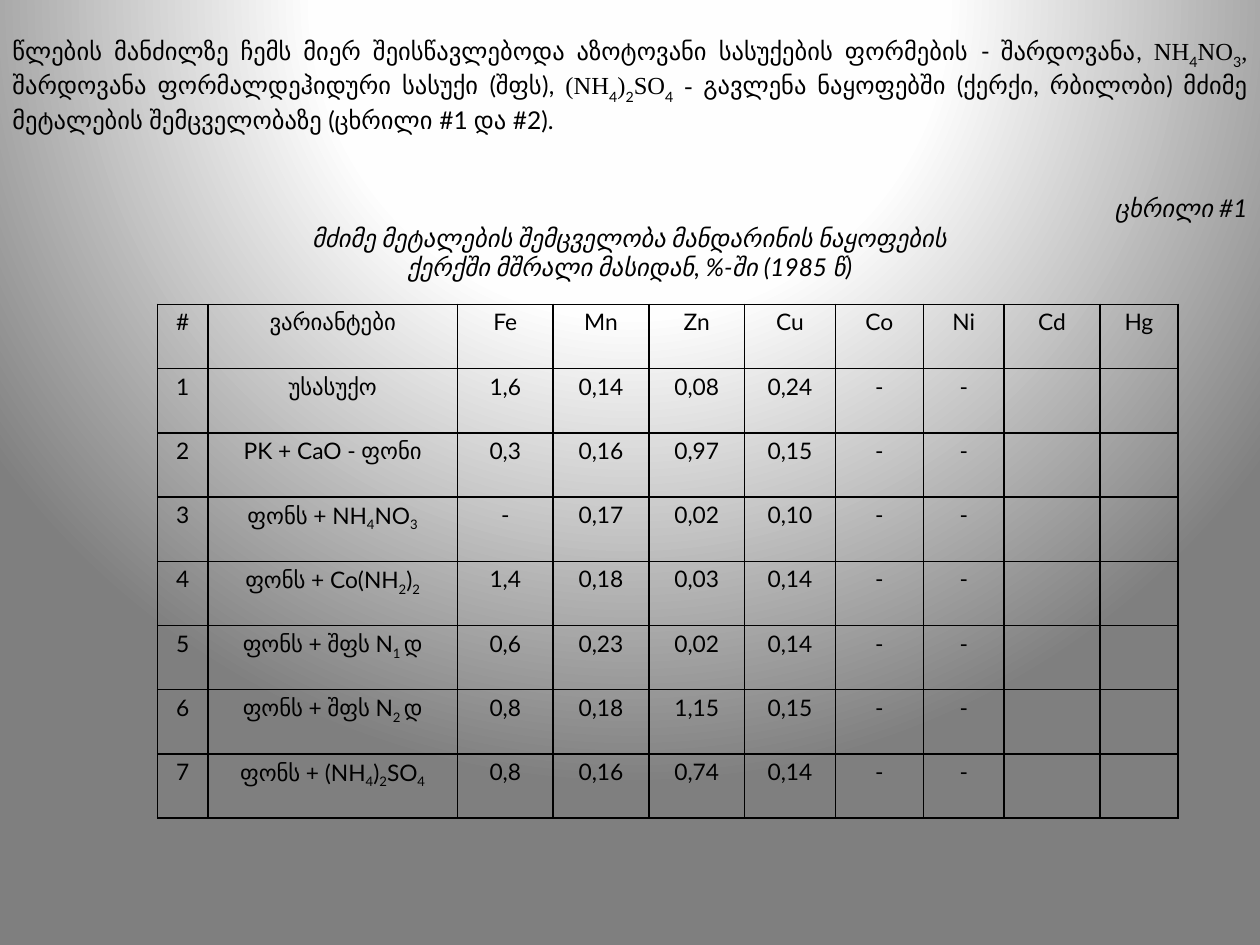
"""Build a slide with an introduction and a table of heavy metals in mandarin peel."""
from dataclasses import dataclass

from pptx import Presentation
from pptx.dml.color import RGBColor as Color
from pptx.enum.text import MSO_ANCHOR as Anchor, PP_ALIGN as Align
from pptx.oxml import parse_xml
from pptx.oxml.ns import nsdecls
from pptx.util import Inches, Pt

INTRO = [
    ("წლების მანძილზე ჩემს მიერ შეისწავლებოდა აზოტოვანი სასუქების ფორმების - შარდოვანა, ", "sans"),
    ("NH~4~NO~3~,", "serif"),
    (" შარდოვანა ფორმალდეჰიდური სასუქი (შფს), ", "sans"),
    ("(NH~4~)~2~SO~4~ - ", "serif"),
    ("გავლენა ნაყოფებში (ქერქი, რბილობი) მძიმე მეტალების შემცველობაზე (ცხრილი #1 და #2).", "sans"),
]
CAPTIONS = [
    ("ცხრილი #1", Align.RIGHT, 2),
    ("მძიმე მეტალების შემცველობა მანდარინის ნაყოფების", Align.CENTER, 0),
    ("ქერქში მშრალი მასიდან, %-ში (1985 წ)", Align.CENTER, 0),
]
HEADER = ["#", "ვარიანტები", "Fe", "Mn", "Zn", "Cu", "Co", "Ni", "Cd", "Hg"]
VARIANTS = [
    ("უსასუქო", "1,6", "0,14", "0,08", "0,24"),
    ("PK + CaO - ფონი", "0,3", "0,16", "0,97", "0,15"),
    ("ფონს + NH~4~NO~3", "-", "0,17", "0,02", "0,10"),
    ("ფონს + Co(NH~2~)~2", "1,4", "0,18", "0,03", "0,14"),
    ("ფონს + შფს N~1 ~დ", "0,6", "0,23", "0,02", "0,14"),
    ("ფონს + შფს N~2 ~დ", "0,8", "0,18", "1,15", "0,15"),
    ("ფონს + (NH~4~)~2~SO~4", "0,8", "0,16", "0,74", "0,14"),
]
COLUMN_SHARES = [0.04, 0.198, 0.076, 0.076, 0.076, 0.072, 0.07, 0.064, 0.076, 0.062]
ROW_SHARE = 0.068
TABLE_LEFT, TABLE_TOP = 0.125, 0.322
TEXT_HEIGHT = 0.336
WIDTH, HEIGHT = Inches(10), Inches(7.5)


@dataclass(frozen=True)
class Theme:
    sans: str = "Lato"
    serif: str = "Times New Roman"
    ink: str = "000000"
    body_size: float = 14
    table_size: float = 13
    line: float = 16.8
    border: float = 1
    gradient: tuple = ((0, "FFFFFF"), (40, "FEFEFE"), (100, "7F7F7F"))


THEME = Theme()


def add_runs(paragraph, marked, size, face="sans", italic=False, drop=-25):
    """Add runs, lowering every second part between tildes as a subscript."""
    for index, text in enumerate(marked.split("~")):
        lowered = index % 2 == 1
        run = paragraph.add_run()
        run.text = text
        run.font.name = THEME.sans if lowered else getattr(THEME, face)
        run.font.size = Pt(size)
        run.font.italic = italic
        run.font.color.rgb = Color.from_string(THEME.ink)
        if lowered:
            run._r.get_or_add_rPr().set("baseline", str(drop * 1000))


def paint_background(slide):
    """Fill the background with a radial gradient centred at the top."""
    stops = "".join(
        f'<a:gs pos="{position * 1000}"><a:srgbClr val="{color}"/></a:gs>'
        for position, color in THEME.gradient
    )
    slide.element.cSld.insert(0, parse_xml(
        f'<p:bg {nsdecls("p", "a")}><p:bgPr><a:gradFill rotWithShape="1">'
        f'<a:gsLst>{stops}</a:gsLst><a:path path="circle">'
        '<a:fillToRect l="50000" t="-80000" r="50000" b="180000"/></a:path>'
        '</a:gradFill><a:effectLst/></p:bgPr></p:bg>'
    ))


def add_borders(cell):
    """Draw a thin line on all four sides of a cell."""
    properties = cell._tc.get_or_add_tcPr()
    for index, side in enumerate("LRTB"):
        properties.insert(index, parse_xml(
            f'<a:ln{side} {nsdecls("a")} w="{Pt(THEME.border)}"><a:solidFill>'
            f'<a:srgbClr val="{THEME.ink}"/></a:solidFill></a:ln{side}>'
        ))


def add_metal_table(slide):
    """Add the table of metal shares by variant."""
    rows = [HEADER] + [
        [str(number), *variant, "-", "-", "", ""]
        for number, variant in enumerate(VARIANTS, 1)
    ]
    frame = slide.shapes.add_table(
        len(rows), len(HEADER), int(WIDTH * TABLE_LEFT), int(HEIGHT * TABLE_TOP),
        int(WIDTH * sum(COLUMN_SHARES)), int(HEIGHT * ROW_SHARE * len(rows)),
    )
    table = frame.table
    table.first_row = table.horz_banding = False
    for column, share in zip(table.columns, COLUMN_SHARES):
        column.width = int(WIDTH * share)
    for row, texts in zip(table.rows, rows):
        row.height = int(HEIGHT * ROW_SHARE)
        for cell, text in zip(row.cells, texts):
            cell.fill.background()
            add_borders(cell)
            cell.margin_left = cell.margin_right = Inches(0.07)
            cell.margin_top = cell.margin_bottom = 0
            paragraph = cell.text_frame.paragraphs[0]
            paragraph.alignment = Align.CENTER
            paragraph.line_spacing = 1.15
            if text:
                add_runs(paragraph, text, THEME.table_size)


def add_introduction(slide):
    """Add the introduction and the table captions in one text box."""
    box = slide.shapes.add_textbox(0, 0, WIDTH, int(HEIGHT * TEXT_HEIGHT))
    frame = box.text_frame
    frame.word_wrap = True
    frame.vertical_anchor = Anchor.TOP
    frame.margin_top = Inches(0.05) + Pt(THEME.line)
    paragraph = frame.paragraphs[0]
    paragraph.alignment = Align.JUSTIFY
    for text, face in INTRO:
        add_runs(paragraph, text, THEME.body_size, face, drop=-30)
    for text, alignment, gap_lines in CAPTIONS:
        paragraph = frame.add_paragraph()
        paragraph.alignment = alignment
        paragraph.space_before = Pt(THEME.line * gap_lines)
        add_runs(paragraph, text, THEME.body_size, italic=True)


def main():
    """Build and save the presentation."""
    presentation = Presentation()
    presentation.slide_width, presentation.slide_height = WIDTH, HEIGHT
    slide = presentation.slides.add_slide(presentation.slide_layouts[6])
    paint_background(slide)
    add_metal_table(slide)
    add_introduction(slide)
    presentation.save("out.pptx")


if __name__ == "__main__":
    main()
